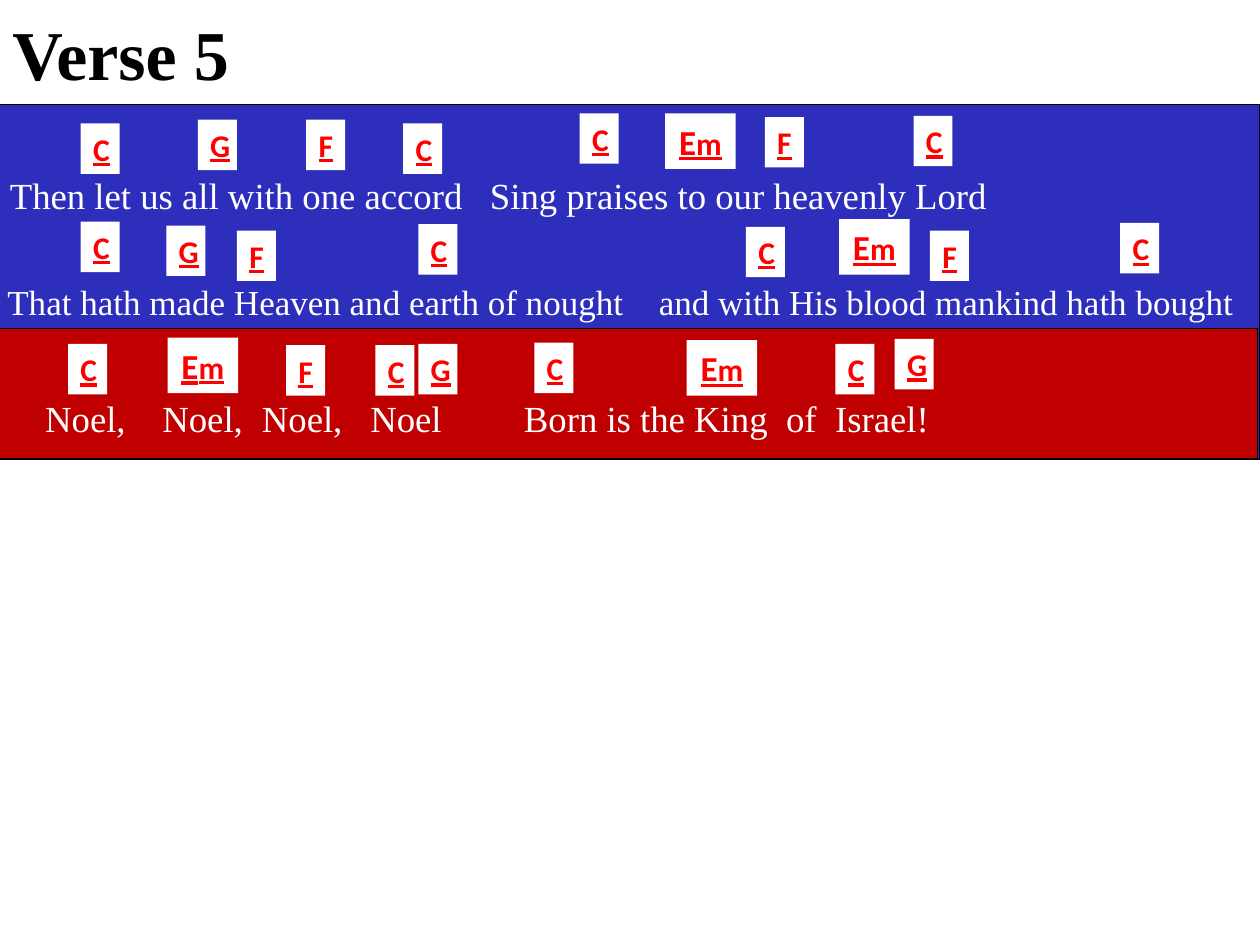
from typing import NamedTuple

from lxml.etree import SubElement
from pptx import Presentation
from pptx.dml.color import RGBColor
from pptx.enum.shapes import MSO_SHAPE
from pptx.enum.text import MSO_AUTO_SIZE, PP_ALIGN
from pptx.oxml.ns import qn
from pptx.util import Inches, Pt

WHITE, BLACK, RED = "FFFFFF", "000000", "FF0000"
VERSE_BLUE, CHORUS_RED = "2E2EBC", "C00000"


class Frame(NamedTuple):
    left: float
    top: float
    width: float
    height: float


class Lyric(NamedTuple):
    text: str
    frame: Frame
    size: int
    tab_stops: list[float]


class Chord(NamedTuple):
    name: str
    left: float
    top: float


BANDS = [
    (Frame(-0.02, 0.83, 10.02, 2.82), VERSE_BLUE),
    (Frame(-0.04, 2.61, 10.02, 1.03), CHORUS_RED),
]

LYRICS = [
    Lyric("Then let us all with one accord\tSing praises to our heavenly Lord",
          Frame(-0.02, 1.32, 10.11, 0.45), 21, [3.81]),
    Lyric("That hath made Heaven and earth of nought\tand with His blood mankind hath bought",
          Frame(-0.04, 2.18, 10.02, 0.44), 20, [5.17]),
    Lyric("\tNoel,\tNoel,\tNoel,\tNoel\tBorn is the King\tof\tIsrael!",
          Frame(0.05, 3.09, 10.02, 0.45), 21, [0.21, 1.14, 1.93, 2.79, 4.01, 6.09, 6.48]),
]

CHORDS = [
    # first line
    Chord("C", 0.64, 0.98), Chord("G", 1.57, 0.95), Chord("F", 2.43, 0.95),
    Chord("C", 3.2, 0.98), Chord("C", 4.6, 0.9), Chord("Em", 5.28, 0.9),
    Chord("F", 6.07, 0.93), Chord("C", 7.25, 0.92),
    # second line
    Chord("C", 0.64, 1.76), Chord("G", 1.32, 1.79), Chord("F", 1.88, 1.83),
    Chord("C", 3.32, 1.78), Chord("C", 5.92, 1.8), Chord("Em", 6.66, 1.74),
    Chord("F", 7.38, 1.83), Chord("C", 8.89, 1.77),
    # chorus
    Chord("C", 0.54, 2.73), Chord("Em", 1.33, 2.68), Chord("F", 2.27, 2.74),
    Chord("C", 2.98, 2.74), Chord("G", 3.32, 2.73), Chord("C", 4.24, 2.72),
    Chord("Em", 5.45, 2.7), Chord("C", 6.63, 2.73), Chord("G", 7.1, 2.69),
]


def color(hex_value: str) -> RGBColor:
    return RGBColor.from_string(hex_value)


def add_rectangle(page, frame: Frame, fill: str, line: str | None = None):
    box = page.shapes.add_shape(MSO_SHAPE.RECTANGLE, *map(Inches, frame))
    box.shadow.inherit = False
    box.fill.solid()
    box.fill.fore_color.rgb = color(fill)
    if line:
        box.line.color.rgb = color(line)
        box.line.width = Pt(0.75)
    else:
        box.line.fill.background()
    return box


def start_paragraph(box, font_name: str, font_color: str, align=PP_ALIGN.LEFT):
    """Make the box fit its text and return its styled first paragraph."""
    box.text_frame.word_wrap = True
    box.text_frame.auto_size = MSO_AUTO_SIZE.SHAPE_TO_FIT_TEXT
    para = box.text_frame.paragraphs[0]
    para.alignment = align
    para.font.name = font_name
    para.font.color.rgb = color(font_color)
    return para


def set_tab_stops(para, positions: list[float]) -> None:
    properties = para._p.get_or_add_pPr()
    tab_list = SubElement(properties, qn("a:tabLst"))
    for position in positions:
        SubElement(tab_list, qn("a:tab"), pos=str(Inches(position)), algn="l")
    properties.find(qn("a:defRPr")).addprevious(tab_list)


def add_title(page, text: str) -> None:
    box = add_rectangle(page, Frame(0, 0.03, 3.33, 0.77), WHITE)
    para = start_paragraph(box, "Times New Roman", BLACK)
    para.font.size = Pt(40)
    para.font.bold = True
    para.add_run().text = text


def add_lyric(page, lyric: Lyric) -> None:
    box = page.shapes.add_textbox(*map(Inches, lyric.frame))
    para = start_paragraph(box, "Times New Roman", WHITE)
    para.font.size = Pt(lyric.size)
    set_tab_stops(para, lyric.tab_stops)
    para.add_run().text = lyric.text


def add_chord(page, chord: Chord) -> None:
    """Draw a chord label; a minor chord has a larger root letter."""
    minor = len(chord.name) > 1
    width, height = (0.56, 0.44) if minor else (0.31, 0.4)
    box = add_rectangle(page, Frame(chord.left, chord.top, width, height), WHITE)
    para = start_paragraph(box, "Calibri", RED, PP_ALIGN.CENTER)
    para.font.size = Pt(18)
    para.font.bold = True
    para.font.underline = True
    for index, letter in enumerate(chord.name):
        span = para.add_run()
        span.text = letter
        if minor and index == 0:
            span.font.size = Pt(20)


def main() -> None:
    deck = Presentation()
    deck.slide_width, deck.slide_height = Inches(10), Inches(7.5)
    page = deck.slides.add_slide(deck.slide_layouts[6])
    for frame, fill in BANDS:
        add_rectangle(page, frame, fill, BLACK)
    add_title(page, "Verse 5")
    for lyric in LYRICS:
        add_lyric(page, lyric)
    for chord in CHORDS:
        add_chord(page, chord)
    deck.save("out.pptx")


if __name__ == "__main__":
    main()
